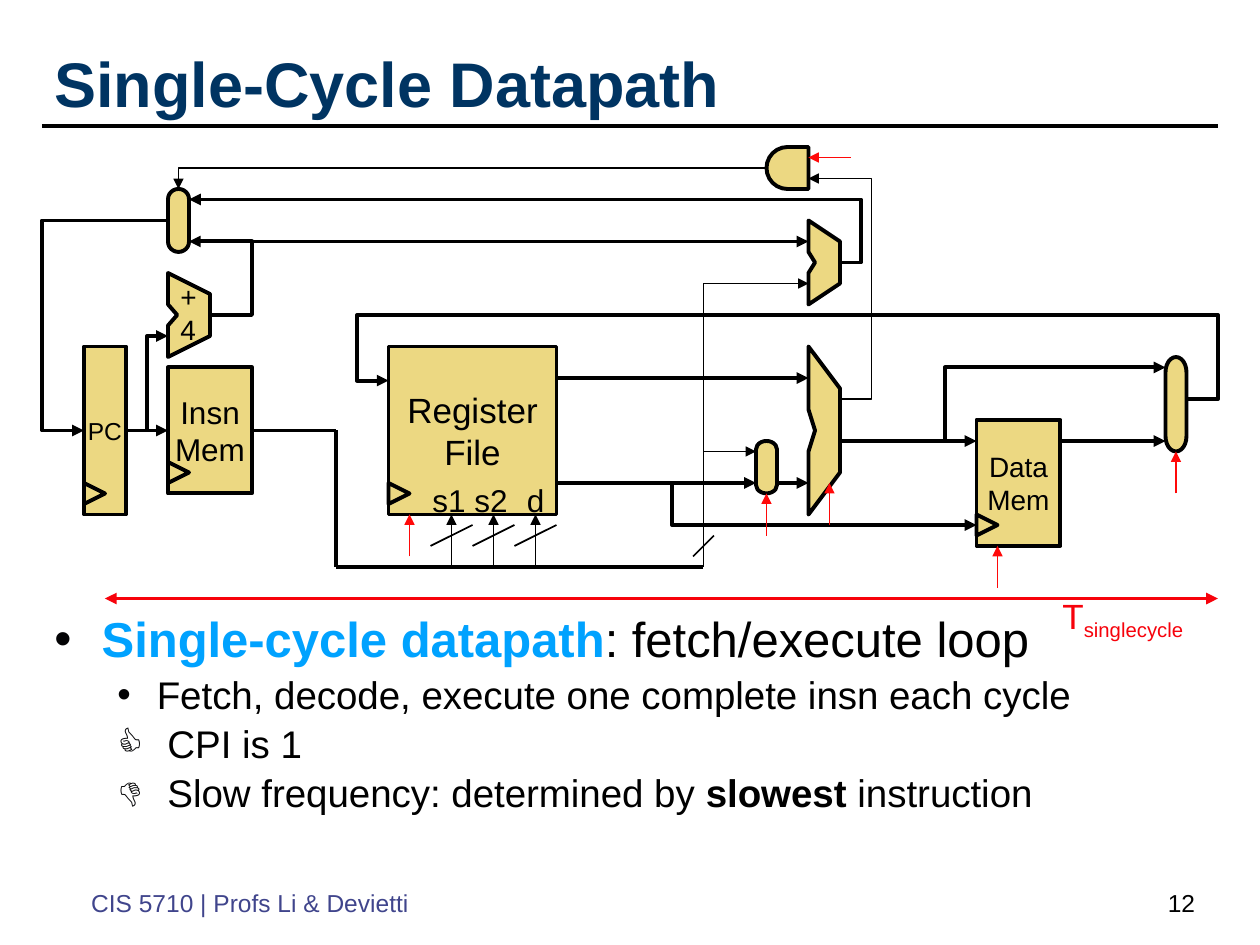
from dataclasses import dataclass

from lxml.etree import SubElement
from pptx import Presentation
from pptx.dml.color import RGBColor
from pptx.enum.shapes import MSO_CONNECTOR, MSO_SHAPE
from pptx.enum.text import MSO_ANCHOR, PP_ALIGN
from pptx.oxml.ns import qn
from pptx.util import Pt

PX = 9525


@dataclass(frozen=True)
class Theme:
    font: str = "Arial"
    black: str = "000000"
    block: str = "ECD882"
    control: str = "FF0909"
    timing: str = "F7020B"
    title: str = "003462"
    footer: str = "40458C"
    accent: str = "00A2FF"
    bullet: str = "030305"
    title_size: int = 36
    body_size: int = 28
    sub_size: int = 22
    large: int = 20
    medium: int = 18
    small: int = 16
    tiny: int = 14
    thick: float = 2.25
    thin: float = 1


T = Theme()


def px(*values):
    return [round(v * PX) for v in values]


def rgb(color):
    return RGBColor.from_string(color)


def set_font(font, size, color=T.black, bold=False):
    font.name, font.size, font.bold = T.font, Pt(size), bold
    font.color.rgb = rgb(color)


def add_text(s, box, text, size, color=T.black, bold=False, wrap=False,
             align=PP_ALIGN.LEFT, anchor=MSO_ANCHOR.TOP):
    tf = s.shapes.add_textbox(*px(*box)).text_frame
    tf.word_wrap, tf.vertical_anchor = wrap, anchor
    tf.text = text
    for p in tf.paragraphs:
        p.alignment = align
        set_font(p.font, size, color, bold)
    return tf


def style_block(sp):
    sp.shadow.inherit = False
    sp.fill.solid()
    sp.fill.fore_color.rgb = rgb(T.block)
    sp.line.color.rgb = rgb(T.black)
    sp.line.width = Pt(T.thick)
    return sp


def add_block(s, kind, *box):
    return style_block(s.shapes.add_shape(kind, *px(*box)))


def add_unit(s, box, text, size):
    sp = add_block(s, MSO_SHAPE.RECTANGLE, *box)
    tf = sp.text_frame
    tf.word_wrap, tf.vertical_anchor = False, MSO_ANCHOR.MIDDLE
    tf.text = text
    for p in tf.paragraphs:
        p.alignment = PP_ALIGN.CENTER
        set_font(p.font, size)
    x, y, _, h = box
    add_block(s, MSO_SHAPE.ISOSCELES_TRIANGLE, x, y + h - 24, 16, 16).rotation = 90
    return sp


def add_mux(s, x, y, h):
    add_block(s, MSO_SHAPE.FLOWCHART_TERMINATOR,
              x + 8 - h / 2, y + h / 2 - 8, h, 16).rotation = 90


def add_path(s, points, close):
    fb = s.shapes.build_freeform(*points[0], scale=PX)
    fb.add_line_segments(points[1:], close=close)
    return fb.convert_to_shape()


def add_alu(s, x, y, w, h):
    notch = w * 2 // 9
    outline = [(0, 0), (0, 3), (notch, 4), (0, 5), (0, 8), (w, 6), (w, 2)]
    style_block(add_path(s, [(x + dx, y + h * dy // 8) for dx, dy in outline], True))


def add_wire(s, *points, color=T.black, width=T.thick, arrows=("tailEnd",)):
    if len(points) == 2:
        sp = s.shapes.add_connector(MSO_CONNECTOR.STRAIGHT, *px(*points[0], *points[1]))
    else:
        sp = add_path(s, points, False)
        sp.fill.background()
        sp.shadow.inherit = False
    sp.line.color.rgb = rgb(color)
    sp.line.width = Pt(width)
    ln = sp.line._get_or_add_ln()
    for end in arrows:
        SubElement(ln, qn(f"a:{end}"), type="triangle")
    if len(points) == 2:
        SubElement(sp._element.spPr, qn("a:effectLst"))
    return sp


def add_bullet(p, level, char, left, hanging, size, runs):
    p.level, p.line_spacing, p.space_before = level, 0.9, Pt(size * 0.2)
    set_font(p.font, size)
    pPr = p._p.get_or_add_pPr()
    pPr.set("marL", str(left * PX))
    pPr.set("indent", str(-hanging * PX))
    clr = pPr.makeelement(qn("a:buClr"))
    SubElement(clr, qn("a:srgbClr"), val=T.bullet)
    font = pPr.makeelement(qn("a:buFont"), typeface=T.font)
    mark = pPr.makeelement(qn("a:buChar"), char=char)
    defaults = pPr.find(qn("a:defRPr"))
    for el in (clr, font, mark):
        defaults.addprevious(el)
    for text, bold, color in runs:
        r = p.add_run()
        r.text, r.font.bold = text, bold
        r.font.color.rgb = rgb(color)


def add_body(s):
    tf = s.shapes.add_textbox(*px(32, 464, 896, 192)).text_frame
    tf.word_wrap = True
    head = [("Single-cycle datapath", True, T.accent), (": fetch/execute loop", False, T.black)]
    add_bullet(tf.paragraphs[0], 0, "•", 36, 36, T.body_size, head)
    details = [
        ("•", [("Fetch, decode, execute one complete insn each cycle", False, T.black)]),
        ("👍", [(" CPI is 1", False, T.black)]),
        ("👎", [(" Slow frequency: determined by ", False, T.black),
               ("slowest ", True, T.black), ("instruction", False, T.black)]),
    ]
    for char, runs in details:
        add_bullet(tf.add_paragraph(), 1, char, 78, 30, T.sub_size, runs)


def add_units(s):
    pc = add_unit(s, (64, 264, 32, 128), "PC", T.tiny)
    insn = add_unit(s, (128, 280, 64, 96), "Insn\vMem", T.medium)
    add_unit(s, (296, 264, 128, 128), "Register\nFile", T.large)
    add_unit(s, (744, 320, 64, 96), "Data\vMem", T.small)
    for alu in [(616, 264, 24, 128), (128, 208, 32, 64), (616, 168, 24, 64)]:
        add_alu(s, *alu)
    for mux in [(576, 336, 40), (888, 272, 72), (128, 144, 48)]:
        add_mux(s, *mux)
    gate = add_block(s, MSO_SHAPE.FLOWCHART_DELAY, 584, 112, 32, 32)
    gate._element.spPr.xfrm.set("flipH", "1")
    add_text(s, (128, 208, 32, 61), "+\n4", T.small)
    for x, w, port in [(320, 45, "s1"), (352, 45, "s2"), (392, 33, "d")]:
        add_text(s, (x, 362, w, 38), port, T.medium)
    return pc, insn


def add_wires(s, pc, insn):
    fetch = add_wire(s, (96, 328), (128, 328))
    fetch.begin_connect(pc, 3)
    fetch.end_connect(insn, 1)
    add_wire(s, (192, 328), (256, 328), arrows=()).begin_connect(insn, 3)
    add_wire(s, (256, 432), (256, 328), arrows=())
    add_wire(s, (256, 432), (536, 432), arrows=())

    for points in [
        [(424, 288), (616, 288)],
        [(424, 368), (576, 368)],
        [(592, 368), (616, 368)],
        [(192, 184), (616, 184)],
        [(640, 336), (744, 336)],
        [(808, 336), (888, 336)],
        [(112, 328), (112, 256), (128, 256)],
        [(128, 168), (32, 168), (32, 328), (64, 328)],
        [(160, 240), (192, 240), (192, 184), (144, 184)],
        [(512, 368), (512, 400), (744, 400)],
        [(720, 336), (720, 280), (888, 280)],
        [(904, 304), (928, 304), (928, 240), (272, 240), (272, 290), (296, 290)],
        [(640, 200), (656, 200), (656, 152), (144, 152)],
    ]:
        add_wire(s, *points)

    for points in [
        [(584, 128), (136, 128), (136, 144)],
        [(536, 432), (536, 344), (576, 344)],
        [(536, 344), (536, 216), (616, 216)],
        [(640, 304), (664, 304), (664, 136), (616, 136)],
    ]:
        add_wire(s, *points, width=T.thin)

    for x in (344, 376, 408):
        add_wire(s, (x, 432), (x, 392), width=T.thin)
        add_wire(s, (x + 16, 400), (x - 16, 416), width=T.thin, arrows=())
    add_wire(s, (544, 408), (528, 424), width=T.thin, arrows=())

    for x, y in [(312, 392), (632, 368), (584, 376), (760, 416), (896, 344)]:
        add_wire(s, (x, y + 32), (x, y), color=T.control, width=T.thin)
    add_wire(s, (648, 120), (616, 120), color=T.control, width=T.thin)


def add_timing(s):
    add_wire(s, (80, 456), (928, 456), color=T.timing, arrows=("headEnd", "tailEnd"))
    tf = add_text(s, (800, 448, 130, 41), "T", T.large, T.timing)
    r = tf.paragraphs[0].add_run()
    r.text = "singlecycle"
    r.font._element.set("baseline", "-25000")


def main():
    prs = Presentation()
    prs.slide_width, prs.slide_height = px(960, 720)
    s = prs.slides.add_slide(prs.slide_layouts[6])
    add_wire(s, (32, 96), (928, 96), arrows=())
    add_text(s, (32, 24, 896, 72), "Single-Cycle Datapath", T.title_size, T.title,
             bold=True, wrap=True, anchor=MSO_ANCHOR.BOTTOM)
    add_text(s, (60, 672, 600, 32), "CIS 5710 | Profs Li & Devietti", T.tiny, T.footer,
             wrap=True, anchor=MSO_ANCHOR.BOTTOM)
    add_text(s, (720, 672, 200, 32), "12", T.tiny, wrap=True,
             align=PP_ALIGN.RIGHT, anchor=MSO_ANCHOR.BOTTOM)
    add_body(s)
    pc, insn = add_units(s)
    add_wires(s, pc, insn)
    add_timing(s)
    prs.save("out.pptx")


if __name__ == "__main__":
    main()
